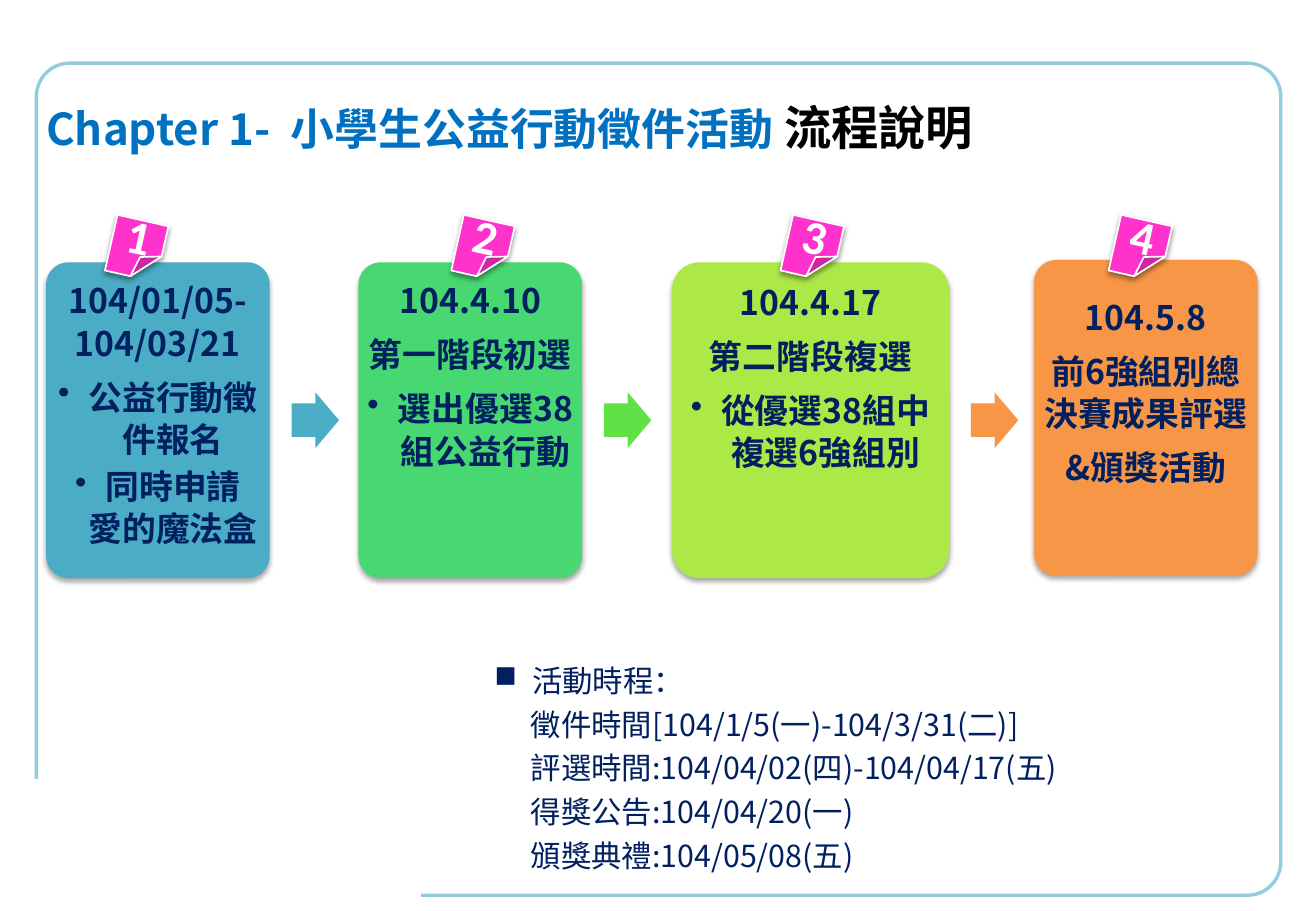
"""Build the process slide of a school public-welfare campaign."""
from lxml import etree
from pptx import Presentation
from pptx import util as u
from pptx.dml.color import RGBColor
from pptx.enum import shapes, text
from pptx.oxml import parse_xml
from pptx.oxml.ns import qn

NAVY = RGBColor(0x00, 0x20, 0x60)
BLUE = RGBColor(0x00, 0x70, 0xC0)
BLACK = RGBColor(0x00, 0x00, 0x00)
WHITE = RGBColor(0xFF, 0xFF, 0xFF)
PALE_BLUE = RGBColor(0x93, 0xCD, 0xDD)
TEAL = RGBColor(0x4B, 0xAC, 0xC6)
GREEN = RGBColor(0x47, 0xD8, 0x72)
LEAF = RGBColor(0x60, 0xE1, 0x46)
LIME = RGBColor(0xAC, 0xE9, 0x46)
ORANGE = RGBColor(0xF7, 0x96, 0x46)
PINK = RGBColor(0xFF, 0x33, 0xCC)

BOLD_FACE = "Noto Sans CJK SC"
PLAIN_FACE = "Noto Sans CJK JP"
NUMBER_FACE = "Calibri"
DRAWING = "http://schemas.openxmlformats.org/drawingml/2006/main"

STAGES = [
    (0.38, 2.16, 1.84, TEAL, 0.91, TEAL, ["104/01/05-104/03/21"],
     ["公益行動徵件報名", "同時申請\v愛的魔法盒"]),
    (2.95, 2.16, 1.84, GREEN, 3.76, LEAF, ["104.4.10", "第一階段初選"],
     ["選出優選38組公益行動"]),
    (5.53, 2.16, 2.28, LIME, 6.47, ORANGE, ["104.4.17", "第二階段複選"],
     ["從優選38組中複選6強組別"]),
    (8.51, 2.14, 1.84, ORANGE, 9.17, None,
     ["104.5.8", "前6強組別總決賽成果評選", "&頒獎活動"], []),
]
SCHEDULE = [
    "徵件時間[104/1/5(一)-104/3/31(二)]",
    "評選時間:104/04/02(四)-104/04/17(五)",
    "得獎公告:104/04/20(一)",
    "頒獎典禮:104/05/08(五)",
]


def add_block(page, preset, left, top, width, height, fill=None, line=None, weight=2):
    block = page.shapes.add_shape(
        preset, u.Inches(left), u.Inches(top), u.Inches(width), u.Inches(height))
    block.shadow.inherit = False
    if fill is None:
        block.fill.background()
    else:
        block.fill.solid()
        block.fill.fore_color.rgb = fill
    if line is None:
        block.line.fill.background()
    else:
        block.line.color.rgb = line
        block.line.width = u.Pt(weight)
    return block


def cast_shadow(block, alpha):
    effects = block._element.spPr.find(qn("a:effectLst"))
    effects.append(parse_xml(
        f'<a:outerShdw xmlns:a="{DRAWING}" blurRad="{u.Pt(3.1)}" dist="{u.Pt(1.8)}"'
        f' dir="5400000" rotWithShape="0"><a:srgbClr val="000000">'
        f'<a:alpha val="{alpha * 1000}"/></a:srgbClr></a:outerShdw>'))


def next_para(frame):
    first = frame.paragraphs[0]
    return frame.add_paragraph() if first.runs else first


def indent(para, margin, bullet=None):
    props = para._p.get_or_add_pPr()
    props.set("marL", str(u.Inches(margin)))
    props.set("indent", str(u.Inches(-margin) if bullet else 0))
    if bullet:
        etree.SubElement(props, qn("a:buChar")).set("char", bullet)


def set_font(para, face, size=None, colour=None, bold=False):
    font = para.font
    font.name, font.bold = face, bold
    if size:
        font.size = u.Pt(size)
    if colour is not None:
        font.color.rgb = colour
    defaults = para._p.pPr.find(qn("a:defRPr"))
    etree.SubElement(defaults, qn("a:ea")).set("typeface", face)


def add_title(page):
    title = page.shapes.title
    title.left, title.top = u.Inches(0.28), u.Inches(0.76)
    title.width, title.height = u.Inches(8.2), u.Inches(1.01)
    frame = title.text_frame
    frame.auto_size = text.MSO_AUTO_SIZE.NONE
    frame.vertical_anchor = text.MSO_ANCHOR.TOP
    para = frame.paragraphs[0]
    para.alignment = text.PP_ALIGN.LEFT
    for words, size, colour in [("Chapter 1-  小學生公益行動徵件活動 ", 26, BLUE),
                                ("流程說明", 28, BLACK)]:
        span = para.add_run()
        span.text = words
        span.font.size = u.Pt(size)
        span.font.color.rgb = colour
    set_font(para, BOLD_FACE, bold=True)


def add_card(page, left, top, width, fill, headings, bullets):
    card = add_block(page, shapes.MSO_SHAPE.ROUNDED_RECTANGLE, left, top, width, 2.6, fill)
    card.adjustments[0] = 0.1
    cast_shadow(card, 35)
    frame = card.text_frame
    frame.word_wrap = True
    frame.margin_left = frame.margin_right = 0
    frame.margin_top = frame.margin_bottom = u.Inches(0.08)
    frame.vertical_anchor = text.MSO_ANCHOR.TOP
    if not bullets:
        frame.vertical_anchor = text.MSO_ANCHOR.MIDDLE
        frame.margin_bottom = u.Inches(0.52)
    lines = [(words, 7, None) for words in headings]
    lines += [(words, 3, "•") for words in bullets]
    for words, gap, bullet in lines:
        para = next_para(frame)
        para.text = words
        para.alignment = text.PP_ALIGN.CENTER
        para.line_spacing = u.Pt(25)
        para.space_after = u.Pt(gap)
        if bullet:
            indent(para, 0.25, bullet)
        set_font(para, BOLD_FACE, 20, NAVY, True)


def add_arrow(page, left, fill):
    arrow = add_block(page, shapes.MSO_SHAPE.RIGHT_ARROW, left, 3.23, 0.39, 0.46, fill)
    arrow.adjustments[0] = 0.6


def add_badge(page, left, number):
    badge = add_block(page, shapes.MSO_SHAPE.FOLDED_CORNER, left, 1.81, 0.43, 0.47,
                      PINK, WHITE, 1)
    fold = badge._element.spPr.find(qn("a:prstGeom")).get_or_add_avLst()
    etree.SubElement(fold, qn("a:gd"), name="adj", fmla="val 50000")
    badge.rotation = 12.7
    cast_shadow(badge, 38)
    frame = badge.text_frame
    frame.vertical_anchor = text.MSO_ANCHOR.MIDDLE
    para = frame.paragraphs[0]
    para.text = str(number)
    para.alignment = text.PP_ALIGN.CENTER
    set_font(para, NUMBER_FACE, 28, WHITE, True)


def add_schedule(page):
    box = page.shapes.add_textbox(
        u.Inches(3.97), u.Inches(5.25), u.Inches(5.42), u.Inches(2.01))
    frame = box.text_frame
    frame.word_wrap = True
    heading = next_para(frame)
    heading.text = "活動時程："
    heading.line_spacing = 1.5
    indent(heading, 0.31, "■")
    set_font(heading, PLAIN_FACE, 18, NAVY)
    for words in SCHEDULE:
        para = next_para(frame)
        para.text = words
        para.line_spacing = u.Pt(26)
        indent(para, 0.3)
        set_font(para, PLAIN_FACE, 18, NAVY)


def main():
    deck = Presentation()
    deck.slide_width, deck.slide_height = u.Inches(10.83), u.Inches(7.5)
    page = deck.slides.add_slide(deck.slide_layouts[5])
    border = add_block(page, shapes.MSO_SHAPE.ROUNDED_RECTANGLE, 0.3, 0.52, 10.24, 6.85,
                       line=PALE_BLUE)
    border.adjustments[0] = 0.04
    add_block(page, shapes.MSO_SHAPE.RECTANGLE, 0, 6.43, 3.45, 1.07, WHITE, WHITE)
    add_title(page)
    for number, stage in enumerate(STAGES, 1):
        left, top, width, fill, badge_left, arrow_fill, headings, bullets = stage
        add_card(page, left, top, width, fill, headings, bullets)
        if arrow_fill is not None:
            add_arrow(page, left + width + 0.18, arrow_fill)
        add_badge(page, badge_left, number)
    add_schedule(page)
    deck.save("out.pptx")


if __name__ == "__main__":
    main()
